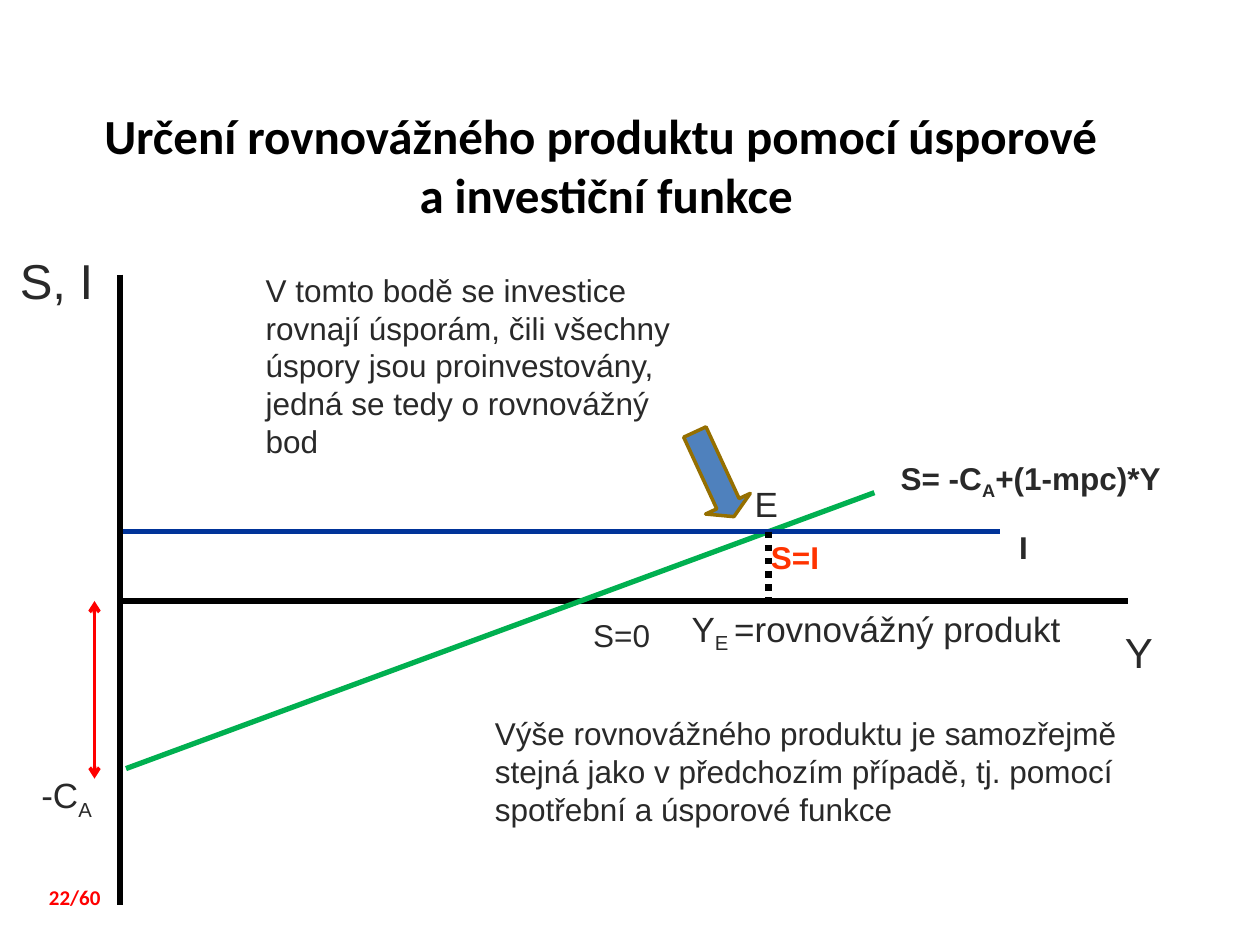
from dataclasses import dataclass

from lxml.etree import SubElement
from pptx import Presentation
from pptx.dml.color import RGBColor as Rgb
from pptx.enum.dml import MSO_LINE as Dash
from pptx.enum.shapes import MSO_CONNECTOR as Conn, MSO_SHAPE as Shape
from pptx.enum.text import MSO_ANCHOR as Anchor, PP_ALIGN as Align
from pptx.oxml.ns import qn
from pptx.util import Inches, Pt


@dataclass(frozen=True)
class Theme:
    head: str = "Calibri"
    body: str = "Arial"
    black: str = "000000"
    ink: str = "292929"
    red: str = "FF0000"
    orange: str = "FF3300"
    green: str = "00B050"
    navy: str = "003399"
    blue: str = "4F81BD"
    brown: str = "956F00"
    title: int = 28
    axis: int = 24
    label: int = 20
    note: int = 18
    small: int = 12


@dataclass(frozen=True)
class Box:
    x: float
    y: float
    w: float
    h: float

    def sub(self, x, y, w, h):
        """Give a box whose offset is counted from this one."""
        return Box(self.x + x, self.y + y, w, h)

    def spot(self, x, y):
        return Inches(self.x + x), Inches(self.y + y)

    def area(self):
        return [Inches(v) for v in (self.x, self.y, self.w, self.h)]


T = Theme()


def add_text(slide, box, text, size=T.note, color=T.ink, bold=False,
             font=T.body, align=Align.LEFT, anchor=Anchor.TOP):
    """Write text; "_" parts turn subscript on and off, a newline breaks."""
    frame = slide.shapes.add_textbox(*box.area()).text_frame
    frame.word_wrap = True
    frame.vertical_anchor = anchor
    para = frame.paragraphs[0]
    para.alignment = align
    for n, part in enumerate(text.split("_")):
        for i, line in enumerate(part.split("\n")):
            if i:
                para.add_line_break()
            run = para.add_run()
            run.text = line
            run.font.name, run.font.size = font, Pt(size)
            run.font.bold = bold
            run.font.color.rgb = Rgb.from_string(color)
            if n % 2:
                run.font._element.set("baseline", "-25000")


def add_line(slide, box, start, end, color, width, dash=None, arrows=False):
    line = slide.shapes.add_connector(
        Conn.STRAIGHT, *box.spot(*start), *box.spot(*end))
    line.line.color.rgb = Rgb.from_string(color)
    line.line.width = Pt(width)
    if dash:
        line.line.dash_style = dash
    if arrows:
        for tag in ("a:headEnd", "a:tailEnd"):
            SubElement(line.line._get_or_add_ln(), qn(tag), type="arrow")
    SubElement(line._element.spPr, qn("a:effectLst"))


def add_pointer(slide, box):
    arrow = slide.shapes.add_shape(Shape.RIGHT_ARROW, *box.area())
    arrow.rotation = 65.2
    arrow.adjustments[0], arrow.adjustments[1] = 0.5, 0.29
    arrow.shadow.inherit = False
    arrow.fill.solid()
    arrow.fill.fore_color.rgb = Rgb.from_string(T.blue)
    arrow.line.color.rgb = Rgb.from_string(T.brown)
    arrow.line.width = Pt(2)


def add_graph(slide, box):
    """Draw axes, saving and investment lines, and their labels."""
    zero, level, even = 2.59, 2.04, 5.15
    low = 3.92
    lines = [
        ((0, 0), (0, box.h), T.black, 3.5),
        ((0.03, zero), (box.w, zero), T.black, 3.5),
        ((0.05, low), (5.99, 1.73), T.green, 3),
        ((0.03, level), (6.99, level), T.navy, 2.75),
        ((even, level), (even, zero), T.black, 3.75, Dash.ROUND_DOT),
        ((-0.2, zero), (-0.2, 4), T.red, 2, None, True),
    ]
    for line in lines:
        add_line(slide, box, *line)

    labels = [
        ((-0.89, -0.24, 0.94, 0.57), "S, I", T.title),
        ((7.88, 2.74, 0.86, 0.51), "Y", T.axis),
        ((6.1, 1.41, 2.9, 0.7), "S= -C_A_+(1-mpc)*Y", T.note, T.ink, True),
        ((7.04, 1.96, 0.7, 0.4), "I", T.note, T.ink, True),
        ((5.07, level, 1.49, 0.4), "S=I", T.note, T.orange, True),
        ((4.94, 1.6, 0.43, 0.44), "E", T.label),
        ((3.66, 2.66, 0.7, 0.4), "S=0"),
        ((4.44, zero, 4.14, 0.43), "Y_E _=rovnovážný produkt", T.label),
        ((-0.72, 3.91, 0.7, 0.44), "-C_A", T.label),
    ]
    for place, *rest in labels:
        add_text(slide, box.sub(*place), *rest)


def add_notes(slide, box):
    """Place both comments and the arrow to the point of balance."""
    add_text(slide, box.sub(0, 0, 3.59, 1.6),
             "V tomto bodě se investice rovnají úsporám, čili všechny úspory "
             "jsou proinvestovány, jedná se tedy o rovnovážný bod")
    add_pointer(slide, box.sub(3.29, 1.47, 0.74, 0.39))
    add_text(slide, box.sub(1.82, 3.52, 5.31, 1),
             "Výše rovnovážného produktu je samozřejmě stejná jako v předchozím "
             "případě, tj. pomocí spotřební a úsporové funkce")


def main():
    deck = Presentation()
    deck.slide_width, deck.slide_height = Inches(10), Inches(7.5)
    slide = deck.slides.add_slide(deck.slide_layouts[6])
    add_text(slide, Box(0, 0.53, 9.62, 1.55),
             "Určení rovnovážného produktu pomocí úsporové \na investiční funkce",
             T.title, T.black, True, T.head, Align.CENTER, Anchor.MIDDLE)
    add_graph(slide, Box(0.95, 2.18, 8, 5))
    add_notes(slide, Box(2.01, 2.1, 7.13, 4.52))
    add_text(slide, Box(0.29, 6.97, 0.92, 0.3), "22/60",
             T.small, T.red, True, T.head)
    deck.save("out.pptx")


if __name__ == "__main__":
    main()
